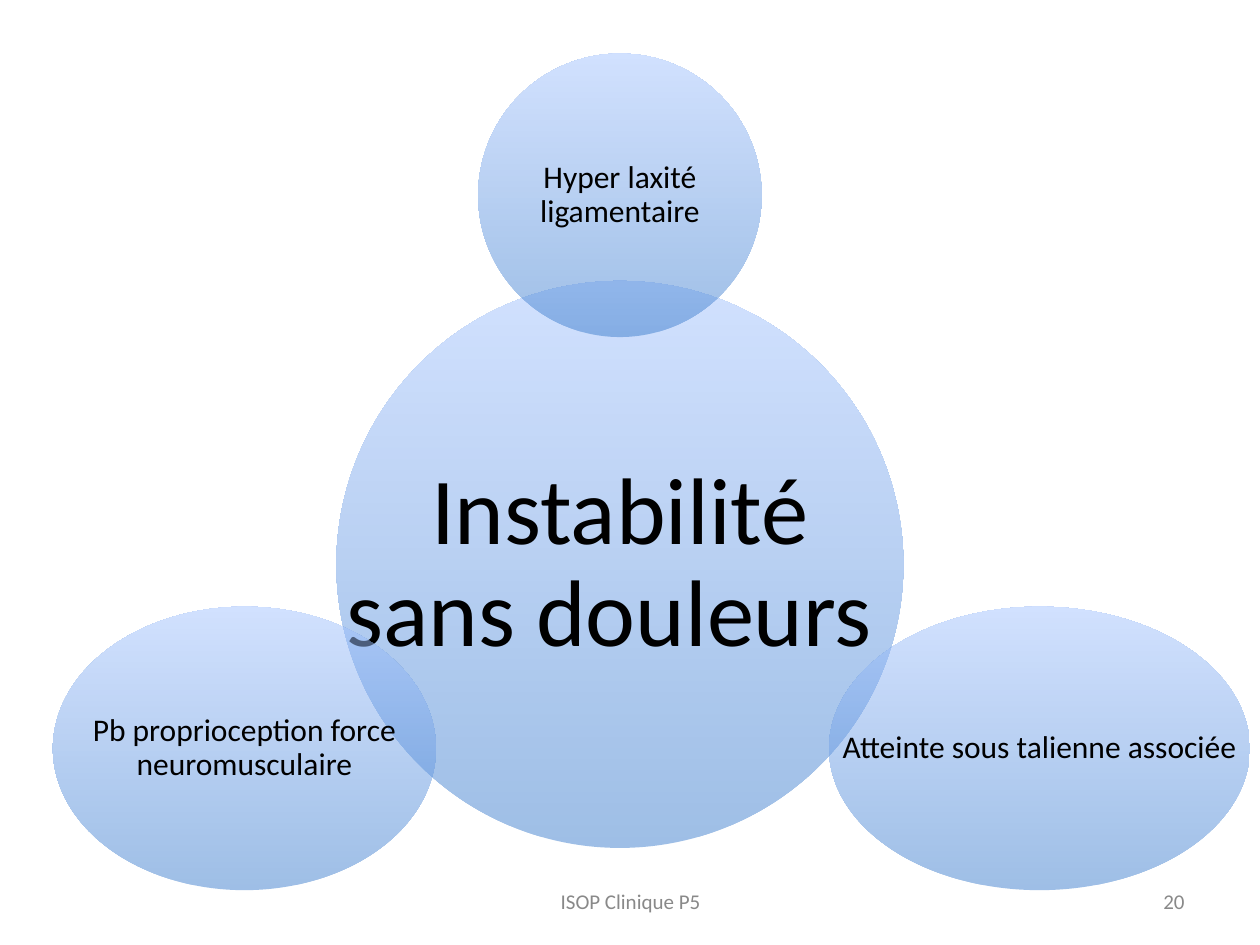
from lxml import etree
from pptx import Presentation
from pptx.dml.color import RGBColor
from pptx.enum.shapes import MSO_SHAPE
from pptx.enum.text import MSO_ANCHOR, PP_ALIGN
from pptx.oxml.ns import qn
from pptx.util import Inches, Pt

ELLIPSE = MSO_SHAPE.OVAL
MIDDLE = MSO_ANCHOR.MIDDLE
CENTER, RIGHT = PP_ALIGN.CENTER, PP_ALIGN.RIGHT

COLORS = {"bottom": "3F7FCE", "top": "A4C4FF", "text": "000000", "footer": "898989"}
FONT = "Calibri"
OPACITY = 50  # percent

HUB_SIZE = 4.5
SATELLITE_HEIGHT = HUB_SIZE / 2
# text, centre x, centre y, width, height, font size, inset
BUBBLES = [
    ("Instabilité sans douleurs ", 4.92, 4.48, HUB_SIZE, HUB_SIZE, 54, 0.07),
    ("Hyper laxité ligamentaire", 4.92, 1.55, SATELLITE_HEIGHT, SATELLITE_HEIGHT, 18, 0.03),
    ("Atteinte sous talienne associée", 8.25, 5.94, 3.34, SATELLITE_HEIGHT, 18, 0.03),
    ("Pb proprioception force neuromusculaire", 1.94, 5.94, 3.04, SATELLITE_HEIGHT, 18, 0.03),
]

FOOTER_TOP, FOOTER_HEIGHT = 6.95, 0.4
# text, left, width, alignment
FOOTERS = [
    ("20", 7.17, 2.33, RIGHT),
    ("ISOP Clinique P5", 3.42, 3.17, CENTER),
]


def add_text(slide, text, box, size, color, alignment, insets=(0.1, 0.05), line_spacing=1.0):
    """Add a vertically centred text box; insets are (horizontal, vertical)."""
    frame = slide.shapes.add_textbox(*box).text_frame
    horizontal, vertical = map(Inches, insets)
    frame_format = {
        "word_wrap": True, "vertical_anchor": MIDDLE,
        "margin_left": horizontal, "margin_right": horizontal,
        "margin_top": vertical, "margin_bottom": vertical,
    }
    for name, value in frame_format.items():
        setattr(frame, name, value)
    paragraph = frame.paragraphs[0]
    paragraph.alignment = alignment
    paragraph.line_spacing = line_spacing
    run = paragraph.add_run()
    run.text = text
    run.font.name = FONT
    run.font.size = Pt(size)
    run.font.color.rgb = RGBColor.from_string(COLORS[color])


def add_translucent_ellipse(slide, box):
    shape = slide.shapes.add_shape(ELLIPSE, *box)
    shape.shadow.inherit = False
    shape.line.fill.background()
    shape.fill.gradient()
    shape.fill.gradient_angle = 90
    for stop, name in zip(shape.fill.gradient_stops, ("bottom", "top")):
        stop.color.rgb = RGBColor.from_string(COLORS[name])
    for color in shape.element.spPr.iter(qn("a:srgbClr")):
        etree.SubElement(color, qn("a:alpha")).set("val", str(OPACITY * 1000))


def main():
    presentation = Presentation()
    presentation.slide_width, presentation.slide_height = Inches(10), Inches(7.5)
    slide = presentation.slides.add_slide(presentation.slide_layouts[6])

    for text, center_x, center_y, width, height, size, inset in BUBBLES:
        box = [Inches(length) for length in
               (center_x - width / 2, center_y - height / 2, width, height)]
        add_translucent_ellipse(slide, box)
        add_text(slide, text, box, size, "text", CENTER, (inset, inset), 0.9)

    for text, left, width, alignment in FOOTERS:
        box = [Inches(length) for length in (left, FOOTER_TOP, width, FOOTER_HEIGHT)]
        add_text(slide, text, box, 12, "footer", alignment)

    presentation.save("out.pptx")


if __name__ == "__main__":
    main()
